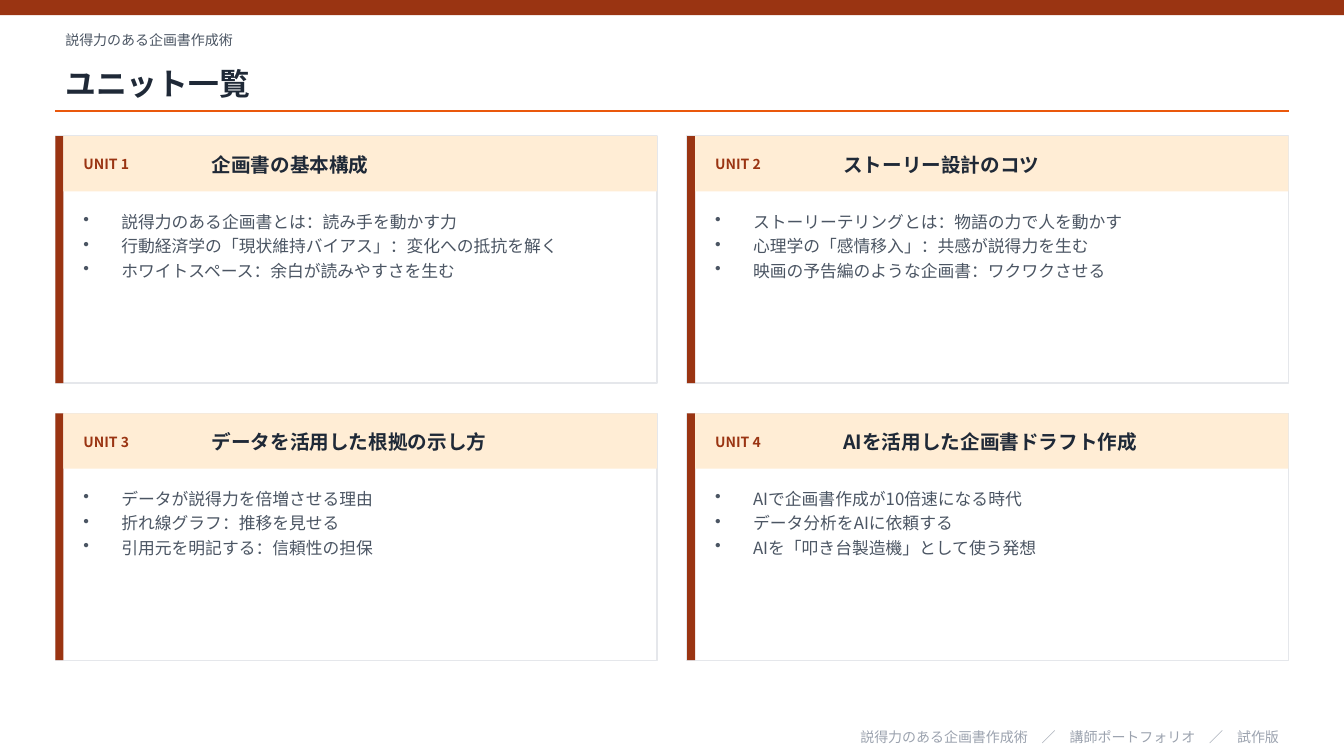
from lxml import etree
from pptx import Presentation
from pptx.dml.color import RGBColor
from pptx.enum import shapes, text
from pptx.oxml.ns import qn
from pptx.util import Pt

FONT = "Noto Sans CJK JP"
RUST, ORANGE, CREAM = "9A3412", "EA580C", "FFEDD5"
INK, SLATE, PALE, BORDER = "1F2937", "4B5563", "9CA3AF", "E5E7EB"
SLIDE_W, SLIDE_H = 960, 540
MARGIN, CONTENT_W = 39.6, 880.8
CARD_TOP, CARD_W, CARD_H, GAP = 97.2, 429.6, 176.4, 21.6
ACCENT_W, HEADER_H = 5.76, 39.6

COURSE = "説得力のある企画書作成術"
UNITS = [
    ("企画書の基本構成", [
        "説得力のある企画書とは：読み手を動かす力",
        "行動経済学の「現状維持バイアス」：変化への抵抗を解く",
        "ホワイトスペース：余白が読みやすさを生む"]),
    ("ストーリー設計のコツ", [
        "ストーリーテリングとは：物語の力で人を動かす",
        "心理学の「感情移入」：共感が説得力を生む",
        "映画の予告編のような企画書：ワクワクさせる"]),
    ("データを活用した根拠の示し方", [
        "データが説得力を倍増させる理由",
        "折れ線グラフ：推移を見せる",
        "引用元を明記する：信頼性の担保"]),
    ("AIを活用した企画書ドラフト作成", [
        "AIで企画書作成が10倍速になる時代",
        "データ分析をAIに依頼する",
        "AIを「叩き台製造機」として使う発想"]),
]


def color(hex_code):
    return RGBColor.from_string(hex_code)


def add_rect(slide, x, y, w, h, fill, border=None):
    rect = slide.shapes.add_shape(
        shapes.MSO_SHAPE.RECTANGLE, Pt(x), Pt(y), Pt(w), Pt(h))
    rect.shadow.inherit = False
    rect.fill.solid()
    rect.fill.fore_color.rgb = color(fill)
    if border:
        rect.line.color.rgb = color(border)
        rect.line.width = Pt(1)
    else:
        rect.line.fill.background()


def add_rule(slide, x, y, w, stroke):
    rule = slide.shapes.add_connector(
        shapes.MSO_CONNECTOR.STRAIGHT, Pt(x), Pt(y), Pt(x + w), Pt(y))
    rule.line.color.rgb = color(stroke)
    rule.line.width = Pt(1)
    etree.SubElement(rule._element.spPr, qn("a:effectLst"))


def add_bullet(paragraph):
    paragraph.space_after = Pt(3)
    properties = paragraph._p.get_or_add_pPr()
    indent = Pt(27)
    properties.set("marL", str(indent))
    properties.set("indent", str(-indent))
    etree.SubElement(properties, qn("a:buChar"), char="•")


def add_text(slide, x, y, w, h, lines, *, size, ink, bold=False,
             align=text.PP_ALIGN.LEFT, anchor=text.MSO_ANCHOR.MIDDLE,
             bullets=False):
    frame = slide.shapes.add_textbox(Pt(x), Pt(y), Pt(w), Pt(h)).text_frame
    frame.word_wrap = True
    frame.vertical_anchor = anchor
    for index, line in enumerate(lines):
        paragraph = frame.add_paragraph() if index else frame.paragraphs[0]
        paragraph.alignment = align
        if bullets:
            add_bullet(paragraph)
        run = paragraph.add_run()
        run.text = line
        run.font.size = Pt(size)
        run.font.bold = bold
        run.font.color.rgb = color(ink)
        run.font.name = FONT
        # Japanese glyphs take the East Asian typeface
        etree.SubElement(run._r.get_or_add_rPr(), qn("a:ea"), typeface=FONT)


def add_unit_card(slide, x, y, number, title, topics):
    # Card body, accent bar and header band
    add_rect(slide, x, y, CARD_W, CARD_H, "FFFFFF", BORDER)
    add_rect(slide, x, y, ACCENT_W, CARD_H, RUST)
    add_rect(slide, x + ACCENT_W, y, CARD_W - ACCENT_W, HEADER_H, CREAM)
    # Unit number, title and topics
    text_x = x + ACCENT_W + 7.2
    add_text(slide, text_x, y + 5.76, 86.4, 28.8, [f"UNIT {number}"],
             size=10, ink=RUST, bold=True)
    add_text(slide, x + 104.4, y + 5.76, 314.64, 28.8, [title],
             size=14, ink=INK, bold=True)
    add_text(slide, text_x, y + 50.4, 403.92, 115.2, topics,
             size=12, ink=SLATE, anchor=text.MSO_ANCHOR.TOP, bullets=True)


def main():
    deck = Presentation()
    deck.slide_width, deck.slide_height = Pt(SLIDE_W), Pt(SLIDE_H)
    slide = deck.slides.add_slide(deck.slide_layouts[6])

    # Heading
    add_rect(slide, 0, 0, SLIDE_W, 10.8, RUST)
    add_text(slide, MARGIN, 18, CONTENT_W, 21.6, [COURSE], size=10, ink=SLATE)
    add_text(slide, MARGIN, 39.6, CONTENT_W, 39.6, ["ユニット一覧"],
             size=22, ink=INK, bold=True)
    add_rule(slide, MARGIN, 79.2, CONTENT_W, ORANGE)

    # Unit cards, two to a row
    for index, (title, topics) in enumerate(UNITS):
        row, column = divmod(index, 2)
        add_unit_card(slide, MARGIN + column * (CARD_W + GAP),
                      CARD_TOP + row * (CARD_H + GAP),
                      index + 1, title, topics)

    # Footer
    footer = "　／　".join([COURSE, "講師ポートフォリオ", "試作版"])
    add_text(slide, MARGIN, 518.4, CONTENT_W, 15.84, [footer],
             size=10, ink=PALE, align=text.PP_ALIGN.RIGHT)

    deck.save("out.pptx")


if __name__ == "__main__":
    main()
